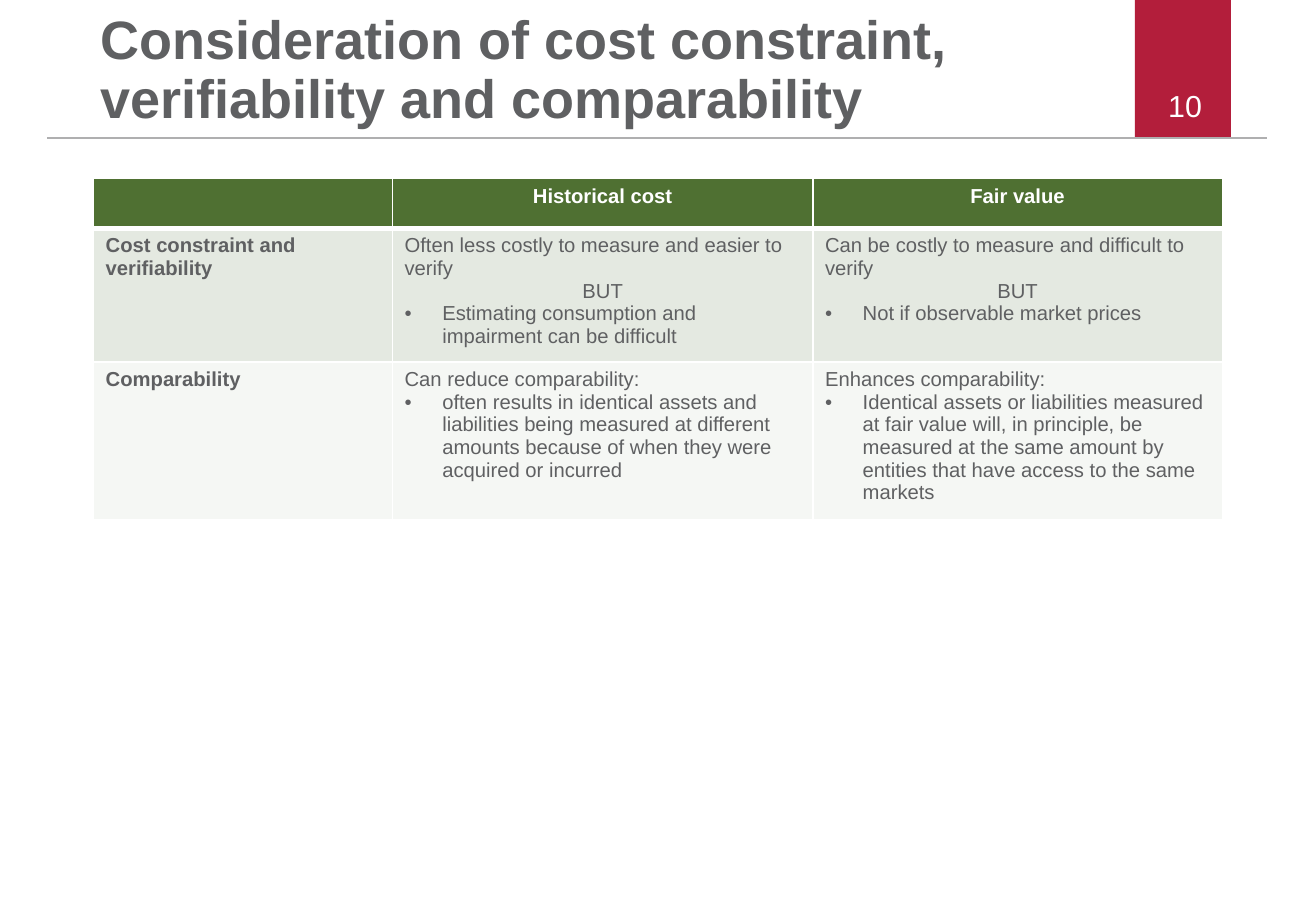
from dataclasses import dataclass
from lxml.etree import SubElement
from pptx import Presentation
from pptx.dml.color import RGBColor
from pptx.enum.shapes import MSO_CONNECTOR, MSO_SHAPE
from pptx.enum.text import MSO_ANCHOR, MSO_AUTO_SIZE, PP_ALIGN
from pptx.oxml.ns import qn
from pptx.util import Inches, Pt


@dataclass(frozen=True)
class Theme:
    """Colours, font and type sizes."""
    font: str = "Arial"
    ink: str = "5F6062"
    white: str = "FFFFFF"
    red: str = "B31E3B"
    rule: str = "AFAFB0"
    green: str = "4F7032"
    sage: str = "D7DFD3"
    title: int = 32
    page: int = 18
    body: int = 12


@dataclass(frozen=True)
class Box:
    """A region of the slide."""
    x: int
    y: int
    w: int
    h: int

    def inner(self, x, y, w, h):
        """Return an inner box given in percent of this one."""
        return Box(self.x + int(self.w * x / 100), self.y + int(self.h * y / 100),
                   int(self.w * w / 100), int(self.h * h / 100))

    def sides(self):
        """Return left, top, width and height."""
        return self.x, self.y, self.w, self.h


THEME = Theme()
COLS = (2.46, 3.46, 3.37)
ROWS = (0.41, 1.02, 1.22)
SHADES = (100, 67, 23)
BUT = "BUT"
DOT = "• "
CELLS = (
    ((), ("Historical cost",), ("Fair value",)),
    (("Cost constraint and verifiability",),
     ("Often less costly to measure and easier to verify", BUT,
      DOT + "Estimating consumption and impairment can be difficult"),
     ("Can be costly to measure and difficult to verify", BUT,
      DOT + "Not if observable market prices")),
    (("Comparability",),
     ("Can reduce comparability:",
      DOT + "often results in identical assets and liabilities being measured at "
      "different amounts because of when they were acquired or incurred"),
     ("Enhances comparability:",
      DOT + "Identical assets or liabilities measured at fair value will, in principle, "
      "be measured at the same amount by entities that have access to the same markets")),
)


def style(para, size, color, bold=False, align=PP_ALIGN.LEFT):
    """Set the font and alignment of a paragraph."""
    para.alignment = align
    font = para.font
    font.name, font.size, font.bold = THEME.font, Pt(size), bold
    font.color.rgb = RGBColor.from_string(color)


def header(slide, box):
    """Place the badge, rule, page number and title."""
    badge = slide.shapes.add_shape(MSO_SHAPE.RECTANGLE, *box.inner(86.24, 0, 7.29, 100).sides())
    badge.shadow.inherit = False
    badge.fill.solid()
    badge.fill.fore_color.rgb = RGBColor.from_string(THEME.red)
    badge.line.fill.background()

    line = box.inner(3.6, 100, 92.7, 0)
    rule = slide.shapes.add_connector(MSO_CONNECTOR.STRAIGHT, line.x, line.y,
                                      line.x + line.w, line.y)
    rule.line.color.rgb = RGBColor.from_string(THEME.rule)
    rule.line.width = Pt(1.2)
    SubElement(rule._element.spPr, qn("a:effectLst"))

    page = slide.shapes.add_textbox(*box.inner(68.88, 58.8, 23.36, 35).sides()).text_frame
    page.word_wrap = True
    page.vertical_anchor = MSO_ANCHOR.MIDDLE
    page.text = "10"
    style(page.paragraphs[0], THEME.page, THEME.white, align=PP_ALIGN.RIGHT)

    title = slide.shapes.title
    title.left, title.top, title.width, title.height = box.inner(7.66, 0, 74.05, 93.9).sides()
    frame = title.text_frame
    frame.text = "Consideration of cost constraint, verifiability and comparability"
    frame.word_wrap = True
    frame.auto_size = MSO_AUTO_SIZE.NONE
    frame.vertical_anchor = MSO_ANCHOR.BOTTOM
    frame.margin_left = frame.margin_right = frame.margin_top = frame.margin_bottom = 0
    frame.paragraphs[0].line_spacing = 0.9
    style(frame.paragraphs[0], THEME.title, THEME.ink, True)


def bullet(para):
    """Give a paragraph a hanging bullet."""
    props = para._p.get_or_add_pPr()
    indent = Inches(0.31)
    props.set("marL", str(indent))
    props.set("indent", str(-indent))
    SubElement(props, qn("a:buFont"), typeface=THEME.font)
    SubElement(props, qn("a:buChar"), char=DOT.strip())


def paint(cell, color, shade, edges):
    """Set the borders and the fill of a cell."""
    props = cell._tc.get_or_add_tcPr()
    for side, width in edges.items():
        edge = SubElement(props, qn("a:ln" + side), w=str(Pt(width)))
        SubElement(SubElement(edge, qn("a:solidFill")), qn("a:srgbClr"), val=THEME.white)
    cell.fill.solid()
    cell.fill.fore_color.rgb = RGBColor.from_string(color)
    if shade < 100:
        tint = props.find(qn("a:solidFill")).find(qn("a:srgbClr"))
        SubElement(tint, qn("a:alpha"), val=str(shade * 1000))


def write(cell, texts, head, bold):
    """Fill a cell with its paragraphs."""
    frame = cell.text_frame
    color = THEME.white if head else THEME.ink
    style(frame.paragraphs[0], THEME.body, color, bold)
    for i, text in enumerate(texts):
        para = frame.add_paragraph() if i else frame.paragraphs[0]
        para.text = text.removeprefix(DOT)
        if text.startswith(DOT):
            bullet(para)
        mid = head or text == BUT
        style(para, THEME.body, color, bold, PP_ALIGN.CENTER if mid else PP_ALIGN.LEFT)


def matrix(slide, box):
    """Place the comparison table."""
    table = slide.shapes.add_table(len(ROWS), len(COLS), *box.sides()).table
    for col, share in zip(table.columns, COLS):
        col.width = int(box.w * share / sum(COLS))
    for row, share in zip(table.rows, ROWS):
        row.height = int(box.h * share / sum(ROWS))
    for r, line in enumerate(CELLS):
        head = r == 0
        edges = {"L": 1, "R": 1, "T": 3 if r == 1 else 1, "B": 3 if head else 1}
        for c, texts in enumerate(line):
            cell = table.cell(r, c)
            paint(cell, THEME.green if head else THEME.sage, SHADES[r], edges)
            write(cell, texts, head, head or c == 0)


def main():
    """Build the slide and save it."""
    deck = Presentation()
    deck.slide_width, deck.slide_height = Inches(10.83), Inches(7.5)
    slide = deck.slides.add_slide(deck.slide_layouts[5])
    page = Box(0, 0, deck.slide_width, deck.slide_height)
    header(slide, page.inner(0, 0, 100, 15.2))
    matrix(slide, page.inner(7.11, 19.6, 85.78, 35.3))
    deck.save("out.pptx")


if __name__ == "__main__":
    main()
